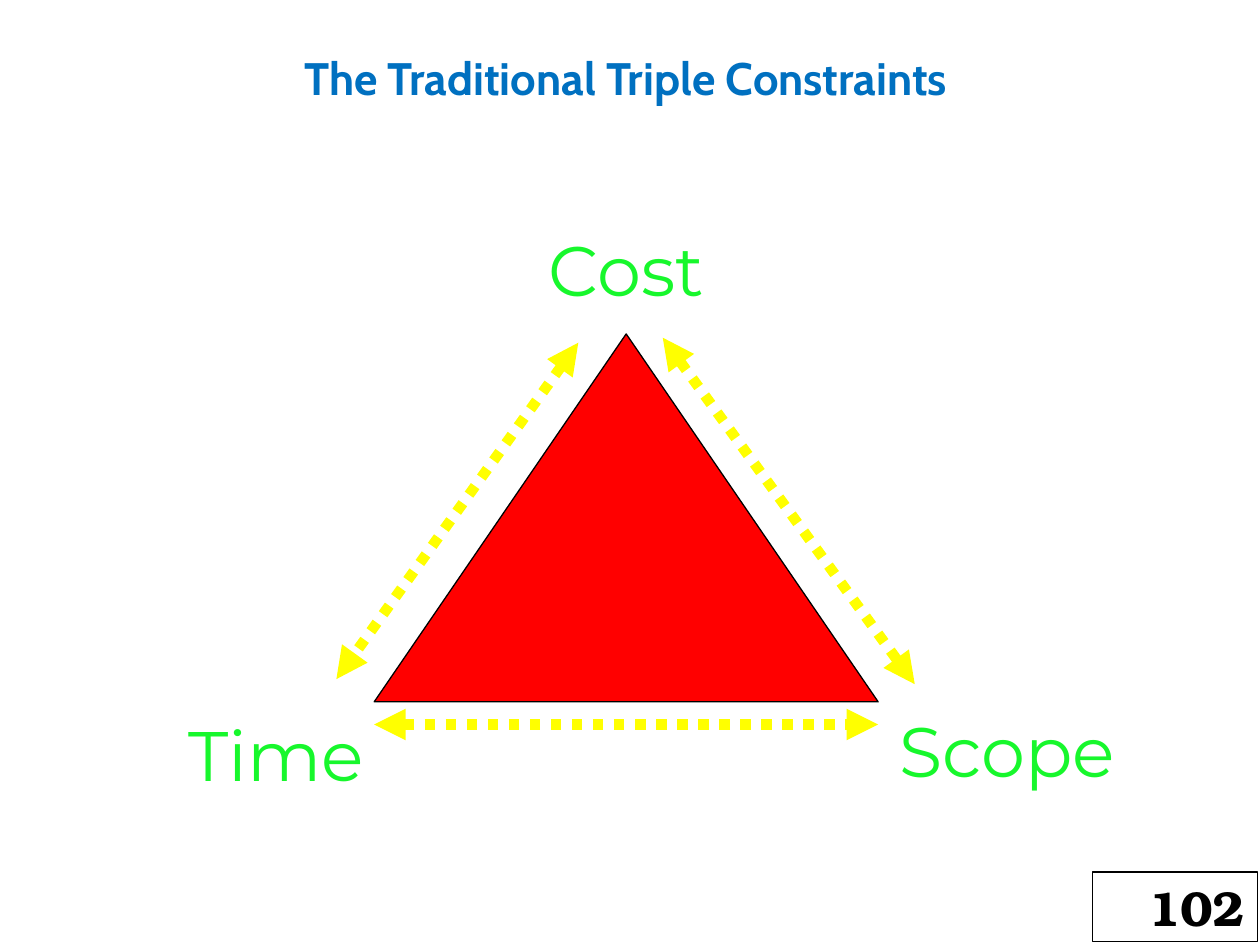
from lxml import etree
from pptx import Presentation
from pptx.dml.color import RGBColor
from pptx.enum.dml import MSO_LINE
from pptx.enum.shapes import MSO_CONNECTOR, MSO_SHAPE
from pptx.enum.text import MSO_ANCHOR, PP_ALIGN
from pptx.oxml.ns import qn
from pptx.util import Inches, Pt

CENTER, RIGHT = PP_ALIGN.CENTER, PP_ALIGN.RIGHT
TOP, MIDDLE = MSO_ANCHOR.TOP, MSO_ANCHOR.MIDDLE
RECT, TRIANGLE = MSO_SHAPE.RECTANGLE, MSO_SHAPE.ISOSCELES_TRIANGLE
STRAIGHT, DOTTED = MSO_CONNECTOR.STRAIGHT, MSO_LINE.ROUND_DOT

# Content: boxes are left, top, width, height in inches
TITLE = ("The Traditional Triple Constraints", (0.26, 0.26, 9.42, 7.05))
PAGE = ("102", (8.67, 6.92, 1.31, 0.55))
TRIANGLE_BOX = (2.97, 2.65, 4, 2.92)
CONSTRAINTS = [
    ("Cost", (4.28, 1.75, 1.38, 0.77)),
    ("Time", (1.44, 5.6, 1.5, 0.77)),
    ("Scope", (7.07, 5.57, 1.85, 0.77)),
]
ARROWS = [
    ((4.59, 2.72), (2.67, 5.39)),
    ((5.26, 2.68), (7.26, 5.43)),
    ((2.97, 5.75), (6.97, 5.75)),
]


def rgb(color):
    return RGBColor.from_string(color)


def write(sp, text, size, font, color, bold=False, align=CENTER,
          anchor=TOP, wrap=True, inset=0.1, spacing=None):
    tf = sp.text_frame
    tf.word_wrap, tf.vertical_anchor = wrap, anchor
    tf.margin_left = tf.margin_right = Inches(inset)
    p = tf.paragraphs[0]
    p.alignment = align
    if spacing:
        p.line_spacing = spacing
    r = p.add_run()
    r.text = text
    r.font.size, r.font.name, r.font.bold = Pt(size), font, bold
    r.font.color.rgb = rgb(color)


def add_text(box, text, **fmt):
    write(s.shapes.add_textbox(*map(Inches, box)), text, **fmt)


def add_outlined(kind, box, fill=None):
    sp = s.shapes.add_shape(kind, *map(Inches, box))
    sp.shadow.inherit = False
    if fill:
        sp.fill.solid()
        sp.fill.fore_color.rgb = rgb(fill)
    else:
        sp.fill.background()
    sp.line.color.rgb = rgb("000000")
    sp.line.width = Pt(0.75)
    return sp


def add_arrow(start, end):
    sp = s.shapes.add_connector(STRAIGHT, *map(Inches, start + end))
    sp.line.color.rgb = rgb("FFFF00")
    sp.line.width = Pt(6)
    sp.line.dash_style = DOTTED
    ln = sp.line._get_or_add_ln()
    for tag in ("a:headEnd", "a:tailEnd"):
        etree.SubElement(ln, qn(tag), type="triangle")
    etree.SubElement(ln.getparent(), qn("a:effectLst"))


prs = Presentation()
prs.slide_width, prs.slide_height = Inches(10), Inches(7.5)
s = prs.slides.add_slide(prs.slide_layouts[6])

# Title and page number
text, box = TITLE
add_text(box, text, size=26, font="Cabin", color="0070C0", bold=True, spacing=1.2)
text, box = PAGE
write(add_outlined(RECT, box), text, size=28, font="TeX Gyre Bonum",
      color="000000", bold=True, align=RIGHT, anchor=MIDDLE)

# Triangle with a constraint at each corner
add_outlined(TRIANGLE, TRIANGLE_BOX, fill="FF0000")
for text, box in CONSTRAINTS:
    add_text(box, text, size=40, font="Montserrat", color="17F72C",
             wrap=False, inset=0)

# Two-way arrows along the sides
for start, end in ARROWS:
    add_arrow(start, end)

prs.save("out.pptx")
